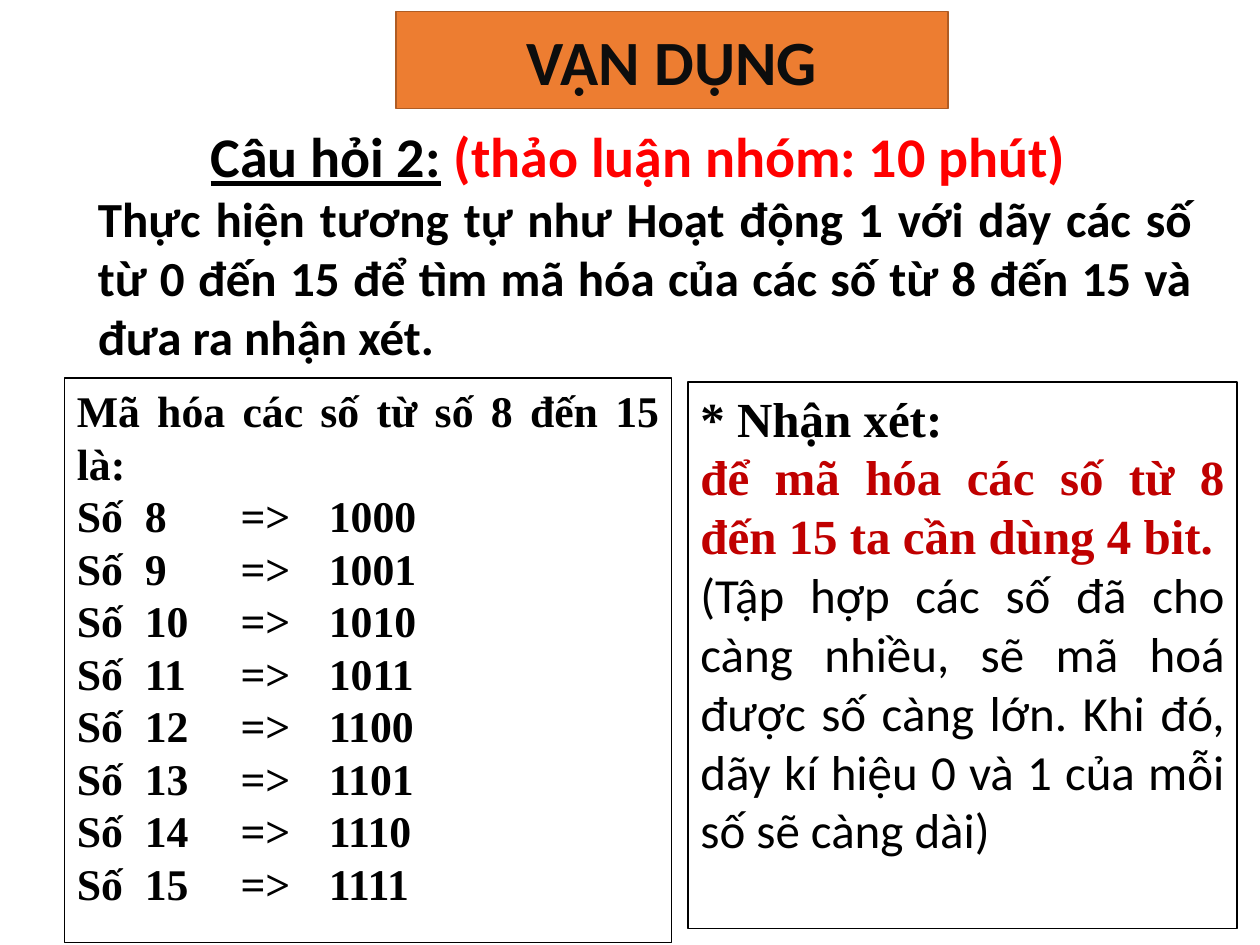
import lxml.etree
import pptx
import pptx.dml.color
import pptx.enum.shapes
import pptx.enum.text
import pptx.oxml.ns
import pptx.util

Cm = pptx.util.Cm
RGBColor = pptx.dml.color.RGBColor
SHAPE = pptx.enum.shapes.MSO_SHAPE
ALIGN = pptx.enum.text.PP_ALIGN
ANCHOR = pptx.enum.text.MSO_ANCHOR

BLACK = RGBColor(0x00, 0x00, 0x00)
WHITE = RGBColor(0xFF, 0xFF, 0xFF)
ORANGE = RGBColor(0xED, 0x7D, 0x31)
DARK_ORANGE = RGBColor(0xAF, 0x5C, 0x24)
NEAR_BLACK = RGBColor(0x0D, 0x0D, 0x0D)
RED = RGBColor(0xFF, 0x00, 0x00)
DARK_RED = RGBColor(0xC0, 0x00, 0x00)
SANS = "Calibri"
SERIF = "Times New Roman"


def format_run(run, size, name, color=BLACK, bold=True, underline=False):
    """Set the font of one run."""
    font = run.font
    font.size = pptx.util.Pt(size)
    font.name = name
    font.color.rgb = color
    font.bold = bold
    font.underline = underline


def set_outline(shape, fill, line):
    """Fill a shape and draw its one-point border, or none."""
    shape.fill.solid()
    shape.fill.fore_color.rgb = fill
    if line is None:
        shape.line.fill.background()
    else:
        shape.line.color.rgb = line
        shape.line.width = pptx.util.Pt(1)


def add_panel(slide, box, preset, line, anchor):
    """Add a white panel and return its text frame."""
    shape = slide.shapes.add_shape(preset, *box)
    shape.shadow.inherit = False
    set_outline(shape, WHITE, line)
    text_frame = shape.text_frame
    text_frame.word_wrap = True
    text_frame.vertical_anchor = anchor
    return text_frame


def set_paragraphs(text_frame, texts):
    """Write justified paragraphs and return them."""
    text_frame.text = "\n".join(texts)
    for paragraph in text_frame.paragraphs:
        paragraph.alignment = ALIGN.JUSTIFY
    return text_frame.paragraphs


def add_tab_stops(paragraph, positions):
    """Give a paragraph left tab stops."""
    properties = paragraph._p.get_or_add_pPr()
    tab_list = lxml.etree.SubElement(properties, pptx.oxml.ns.qn("a:tabLst"))
    for position in positions:
        tab = lxml.etree.SubElement(tab_list, pptx.oxml.ns.qn("a:tab"))
        tab.set("pos", str(int(position)))
        tab.set("algn", "l")


def place_title(slide, box):
    """Turn the title placeholder into the orange banner."""
    title = slide.shapes.title
    title.left, title.top, title.width, title.height = box
    set_outline(title, ORANGE, DARK_ORANGE)
    text_frame = title.text_frame
    text_frame.text = "VẬN DỤNG"
    text_frame.auto_size = pptx.enum.text.MSO_AUTO_SIZE.NONE
    text_frame.vertical_anchor = ANCHOR.MIDDLE
    paragraph = text_frame.paragraphs[0]
    paragraph.alignment = ALIGN.CENTER
    format_run(paragraph.runs[0], 36, SANS, NEAR_BLACK)


def add_question(slide, box):
    """Add the question heading and its task."""
    text_frame = add_panel(slide, box, SHAPE.SNIP_2_DIAG_RECTANGLE, None, ANCHOR.MIDDLE)
    heading, task = set_paragraphs(text_frame, [
        "Câu hỏi 2:",
        "Thực hiện tương tự như Hoạt động 1 với dãy các số từ 0 đến 15 "
        "để tìm mã hóa của các số từ 8 đến 15 và đưa ra nhận xét.",
    ])
    heading.alignment = ALIGN.CENTER
    format_run(heading.runs[0], 32, SANS, underline=True)
    duration = heading.add_run()
    duration.text = " (thảo luận nhóm: 10 phút) "
    format_run(duration, 32, SANS, RED)
    format_run(task.runs[0], 28, SANS)


def add_codes(slide, box):
    """Add the list of four-bit codes, aligned with tab stops."""
    text_frame = add_panel(slide, box, SHAPE.RECTANGLE, BLACK, ANCHOR.TOP)
    rows = [f"Số\t{number}\t=>\t{number:04b}" for number in range(8, 16)]
    paragraphs = set_paragraphs(text_frame, ["Mã hóa các số từ số 8 đến 15 là:"] + rows)
    for paragraph in paragraphs:
        format_run(paragraph.runs[0], 25, SERIF)
    for paragraph in paragraphs[1:]:
        add_tab_stops(paragraph, [Cm(1.37), Cm(3.3), Cm(5.08)])


def add_remark(slide, box):
    """Add the remark and its explanation."""
    text_frame = add_panel(slide, box, SHAPE.RECTANGLE, BLACK, ANCHOR.TOP)
    label, conclusion, explanation = set_paragraphs(text_frame, [
        "* Nhận xét:",
        "để mã hóa các số từ 8 đến 15 ta cần dùng 4 bit.",
        "(Tập hợp các số đã cho càng nhiều, sẽ mã hoá được số càng lớn. "
        "Khi đó, dãy kí hiệu 0 và 1 của mỗi số sẽ càng dài)",
    ])
    format_run(label.runs[0], 28, SERIF)
    format_run(conclusion.runs[0], 28, SERIF, DARK_RED)
    format_run(explanation.runs[0], 28, SANS, bold=False)


def main():
    """Build and save the slide."""
    presentation = pptx.Presentation()
    presentation.slide_width = Cm(25.4)
    presentation.slide_height = Cm(19.05)
    slide = presentation.slides.add_slide(presentation.slide_layouts[5])
    place_title(slide, (Cm(7.98), Cm(0.23), Cm(11.13), Cm(1.96)))
    add_question(slide, (Cm(1.3), Cm(2.36), Cm(23.4), Cm(5.1)))
    add_codes(slide, (Cm(1.3), Cm(7.62), Cm(12.24), Cm(11.38)))
    add_remark(slide, (Cm(13.87), Cm(7.7), Cm(11.07), Cm(11.02)))
    presentation.save("out.pptx")


if __name__ == "__main__":
    main()
